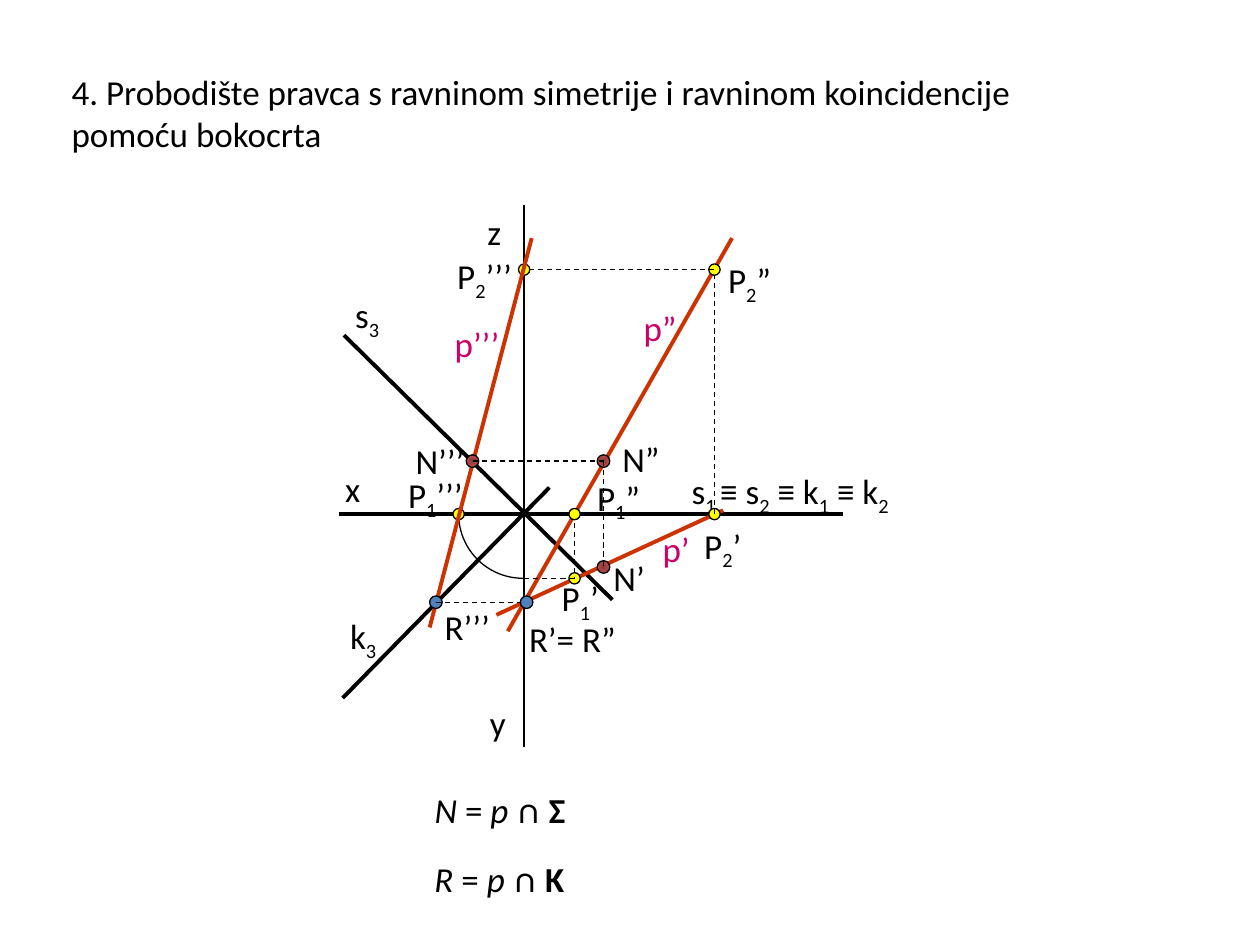
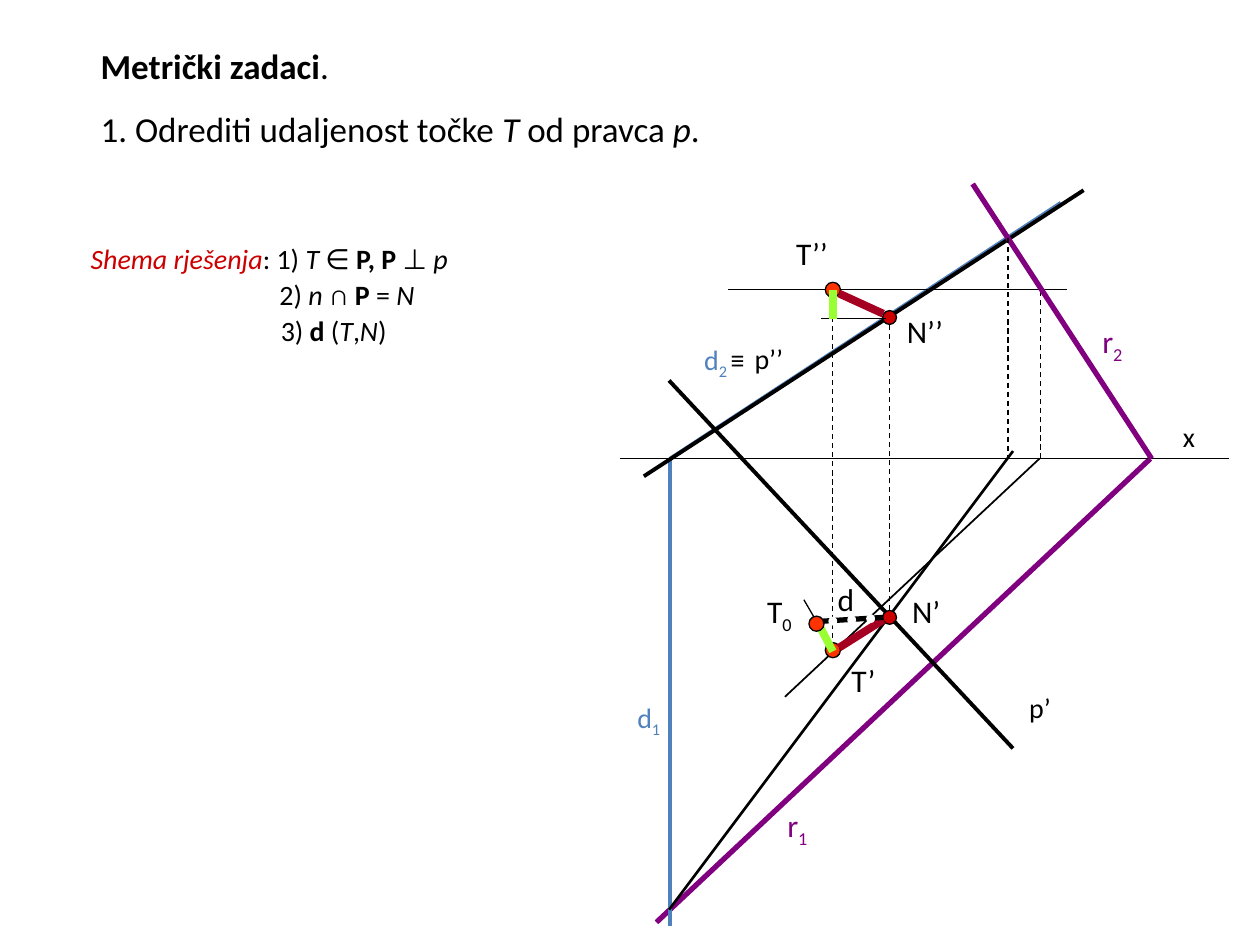
from dataclasses import dataclass
from math import cos, pi, sin
from typing import Any, NamedTuple, Union

from lxml.etree import SubElement
from pptx import Presentation
from pptx.dml.color import RGBColor
from pptx.enum.dml import MSO_LINE
from pptx.enum.shapes import MSO_CONNECTOR, MSO_SHAPE
from pptx.enum.text import MSO_ANCHOR
from pptx.oxml.ns import qn
from pptx.util import Inches, Pt

SLIDE_WIDTH, SLIDE_HEIGHT = Inches(10), Inches(7.5)
COLUMN, ROW = SLIDE_WIDTH / 10, SLIDE_HEIGHT / 7.5

FONT = "Calibri"
BLACK, WHITE, YELLOW, BLUE = "000000", "FFFFFF", "FFFF00", "4F81BD"
ORANGE, MAGENTA, PURPLE = "CC3300", "CC0066", "800080"
RED, BRIGHT_RED, DARK_RED, GREEN = "CC0000", "FF3300", "A50021", "99FF33"
BROWN_GRADIENT = ("893937", "C0504D")

THIN, AXIS, MEDIUM, THICK, HEAVY, BAR = 0.75, 1, 1.5, 2.25, 3, 4.5


class Point(NamedTuple):
    column: float
    row: float


@dataclass(frozen=True)
class Line:
    start: Point
    end: Point
    color: str = BLACK
    weight: float = THIN
    dashed: bool = False


@dataclass(frozen=True)
class Dot:
    center: Point
    fill: Union[str, tuple]
    size: float = 0.1
    outline: str = BLACK


@dataclass(frozen=True)
class QuarterArc:
    """Lower left quarter of a circle."""
    center: Point
    radius: float


@dataclass(frozen=True)
class Label:
    """Runs are parted by |. A run may start with _ (subscript), / (italic),
    * (bold) or ! (accent colour)."""
    at: Point
    width: float
    text: str
    size: int = 20
    color: str = BLACK
    accent: str = BLACK
    height: float = 0


def rgb(color: str) -> RGBColor:
    return RGBColor.from_string(color)


def apply_format(target: Any, values: dict) -> None:
    for name, value in values.items():
        setattr(target, name, value)


def across(columns: float) -> int:
    return round(columns * COLUMN)


def down(rows: float) -> int:
    return round(rows * ROW)


def dashed(start: Point, end: Point) -> Line:
    return Line(start, end, dashed=True)


def draw_line(slide: Any, line: Line) -> None:
    connector = slide.shapes.add_connector(
        MSO_CONNECTOR.STRAIGHT, across(line.start.column), down(line.start.row),
        across(line.end.column), down(line.end.row))
    connector.line.color.rgb = rgb(line.color)
    connector.line.width = Pt(line.weight)
    if line.dashed:
        connector.line.dash_style = MSO_LINE.DASH
    SubElement(connector._element.spPr, qn("a:effectLst"))


def fill_from_center(shape: Any, colors: tuple) -> None:
    shape.fill.gradient()
    for stop, color in zip(shape.fill.gradient_stops, colors):
        stop.color.rgb = rgb(color)
    gradient = shape._element.spPr.find(qn("a:gradFill"))
    gradient.remove(gradient.find(qn("a:lin")))
    focus = SubElement(gradient, qn("a:path"), {"path": "shape"})
    SubElement(focus, qn("a:fillToRect"), {side: "50000" for side in "ltrb"})


def draw_dot(slide: Any, dot: Dot) -> None:
    shape = slide.shapes.add_shape(
        MSO_SHAPE.OVAL, across(dot.center.column - dot.size / 2),
        down(dot.center.row - dot.size / 2), across(dot.size), down(dot.size))
    shape.shadow.inherit = False
    if isinstance(dot.fill, tuple):
        fill_from_center(shape, dot.fill)
    else:
        shape.fill.solid()
        shape.fill.fore_color.rgb = rgb(dot.fill)
    shape.line.color.rgb = rgb(dot.outline)
    shape.line.width = Pt(THIN)


def draw_arc(slide: Any, arc: QuarterArc, steps: int = 24) -> None:
    angles = [pi / 2 * (1 + step / steps) for step in range(steps + 1)]
    points = [(across(arc.center.column + arc.radius * cos(angle)),
               down(arc.center.row + arc.radius * sin(angle))) for angle in angles]
    builder = slide.shapes.build_freeform(*points[0])
    builder.add_line_segments(points[1:], close=False)
    shape = builder.convert_to_shape()
    shape.shadow.inherit = False
    shape.fill.background()
    shape.line.color.rgb = rgb(BLACK)
    shape.line.width = Pt(THIN)


def add_run(paragraph: Any, marked_text: str, label: Label) -> None:
    text = marked_text.lstrip("_/*!")
    marks = marked_text[:len(marked_text) - len(text)]
    run = paragraph.add_run()
    run.text = text
    apply_format(run.font, {"name": FONT, "size": Pt(label.size),
                            "bold": "*" in marks, "italic": "/" in marks})
    run.font.color.rgb = rgb(label.accent if "!" in marks else label.color)
    if "_" in marks:
        run._r.get_or_add_rPr().set("baseline", "-25000")


def draw_label(slide: Any, label: Label) -> None:
    height = label.height or 0.1 + label.size * 1.22 / 72
    box = slide.shapes.add_textbox(across(label.at.column), down(label.at.row),
                                   across(label.width), down(height))
    frame = box.text_frame
    anchor = MSO_ANCHOR.MIDDLE if label.height else MSO_ANCHOR.TOP
    apply_format(frame, {"word_wrap": True, "vertical_anchor": anchor})
    for index, text in enumerate(label.text.split("\n")):
        paragraph = frame.add_paragraph() if index else frame.paragraphs[0]
        paragraph.space_before = Pt(label.size * 0.6 if index else 0)
        for marked_text in text.split("|"):
            add_run(paragraph, marked_text, label)


DRAWERS = {Line: draw_line, Dot: draw_dot, QuarterArc: draw_arc, Label: draw_label}


def piercing_points() -> list:
    axis_x, axis_z = 4.08, 4.16
    p1_first, p1_second = Point(4.56, 4.59), Point(4.56, axis_x)
    p1_third = Point(3.64, axis_x)
    p2_first, p2_second = Point(5.67, axis_x), Point(5.67, 2.14)
    p2_third = Point(axis_z, 2.14)
    n_first, n_second, n_third = Point(4.79, 4.5), Point(4.79, 3.66), Point(3.75, 3.66)
    r_first, r_third = Point(4.18, 4.78), Point(3.46, 4.78)
    return [
        Label(Point(5.39, 3.68), 2.35, "s|_1 |≡ s|_2| ≡ k|_1| ≡ k|_2"),
        Label(Point(0.47, 0.39), 8.13,
              "4. Probodište pravca s ravninom simetrije i ravninom koincidencije "
              "pomoću bokocrta", height=1.01),
        Line(Point(2.69, axis_x), Point(6.69, axis_x), weight=THICK),
        Label(Point(2.64, 3.66), 0.48, "x"),
        Line(Point(axis_z, 1.63), Point(axis_z, 5.93), weight=AXIS),
        Label(Point(3.77, 1.62), 0.58, "z"),
        Label(Point(3.79, 5.52), 0.43, "y"),
        Line(Point(2.73, 2.66), Point(4.86, 4.76), weight=THICK),
        Label(Point(2.72, 2.28), 0.69, "s|_3"),
        Line(Point(2.72, 5.54), Point(4.36, 3.87), weight=THICK),
        Label(Point(2.68, 4.83), 0.5, "k|_3"),
        Line(Point(4.03, 5.01), Point(5.81, 1.89), ORANGE, THICK),
        Line(Point(3.94, 4.88), Point(5.74, 4.05), ORANGE, THICK),
        Label(Point(5.01, 2.38), 0.6, "p”", color=MAGENTA),
        Label(Point(5.16, 4.14), 0.51, "p’", color=MAGENTA),
        Dot(p1_first, YELLOW, 0.09),
        Label(Point(4.36, 4.53), 0.53, "P|_1|’"),
        dashed(p1_second, p1_first),
        Dot(p1_second, YELLOW, 0.09),
        Label(Point(4.64, 3.73), 0.56, "P|_1|”"),
        Dot(p2_first, YELLOW, 0.09),
        Label(Point(5.49, 4.11), 0.68, "P|_2|’"),
        dashed(p1_first, Point(axis_z, p1_first.row)),
        QuarterArc(Point(4.15, axis_x), 0.51),
        Dot(p1_third, YELLOW, 0.09),
        Label(Point(3.14, 3.71), 0.77, "P|_1|’’’"),
        dashed(p2_first, p2_second),
        Dot(p2_second, YELLOW, 0.09),
        Label(Point(5.68, 2), 0.56, "P|_2|”"),
        dashed(p2_second, p2_third),
        Dot(p2_third, YELLOW, 0.09),
        Label(Point(3.53, 1.97), 0.69, "P|_2|’’’"),
        Line(Point(4.22, 1.89), Point(3.41, 4.98), ORANGE, THICK),
        Label(Point(3.51, 2.51), 0.71, "p’’’", color=MAGENTA),
        Dot(n_third, BROWN_GRADIENT),
        Label(Point(3.2, 3.44), 0.66, "N’’’"),
        Dot(n_second, BROWN_GRADIENT),
        dashed(n_third, n_second),
        Label(Point(4.84, 3.42), 0.65, "N”"),
        Dot(n_first, BROWN_GRADIENT),
        dashed(n_second, n_first),
        Label(Point(4.77, 4.37), 0.58, "N’"),
        Label(Point(3.35, 6.21), 1.49, "/N| = |/p| |*∩ Σ"),
        Dot(r_third, BLUE),
        Label(Point(3.43, 4.76), 0.78, "R’’’"),
        Label(Point(3.35, 6.76), 1.47, "/R| = |/p |*∩ K"),
        dashed(r_third, r_first),
        Dot(r_first, BLUE),
        Label(Point(4.1, 4.85), 0.95, "R’= R”"),
    ]


def point_to_line_distance() -> list:
    axis_x = 3.64
    t_first, t_second, t_turned = Point(6.61, 5.16), Point(6.61, 2.3), Point(6.48, 4.95)
    n_first, n_second = Point(7.06, 4.9), Point(7.06, 2.52)
    trace_d = Point(5.32, axis_x)
    dash_gaps = [Dot(Point(6.61 + 0.15 * gap, 4.93 - 0.01 * gap), WHITE, 0.06, WHITE)
                 for gap in range(3)]
    return [
        Line(Point(9.13, axis_x), Point(5.21, 7.32), PURPLE, HEAVY),
        Label(Point(6.15, 6.35), 0.5, "r|_1", 18, PURPLE),
        Line(Point(8.42, 1.61), trace_d, BLUE, THICK),
        Line(trace_d, Point(trace_d.column, 7.35), BLUE, THICK),
        Label(Point(4.96, 5.51), 0.43, "d|_1", 16, BLUE),
        Label(Point(5.49, 2.67), 0.62, "!d|!_2 |≡", 16, accent=BLUE),
        Line(Point(8.25, axis_x), Point(6.23, 5.53), weight=AXIS),
        Line(Point(5.78, t_second.row), Point(8.47, t_second.row)),
        Label(Point(0.7, 0.3), 6.8,
              "*Metrički zadaci|.\n1. Odrediti udaljenost točke |/T| od pravca |/p|."),
        dashed(t_second, t_first),
        Line(Point(4.92, axis_x), Point(9.75, axis_x)),
        Label(Point(9.29, 3.28), 0.36, "x", 16),
        Line(Point(8.6, 1.51), Point(5.11, 3.78), weight=THICK),
        Line(Point(5.31, 3.02), Point(8.04, 5.94), weight=THICK),
        Dot(t_second, BRIGHT_RED, 0.12),
        Dot(t_first, BRIGHT_RED, 0.12),
        Label(Point(6.66, 5.2), 0.44, "T’", 18),
        Label(Point(6.22, 1.81), 0.56, "T’’", 18),
        Label(Point(5.89, 2.66), 0.49, "p’’", 16),
        Label(Point(8.07, 5.43), 0.44, "p’", 16),
        Label(Point(0.62, 1.87), 3.69,
              "!/Shema rješenja|: 1) |/T |∈ |*P, P |⊥ |/p", 16, accent=RED),
        dashed(Point(8.26, axis_x), Point(8.26, 2.31)),
        Line(Point(9.14, axis_x), Point(7.72, 1.46), PURPLE, HEAVY),
        Label(Point(8.65, 2.51), 0.4, "r|_2", 18, PURPLE),
        Label(Point(2.12, 2.15), 2.14, "2) |/n |∩ |*P| = |/N", 16),
        dashed(Point(8, 1.89), Point(8, axis_x)),
        Line(Point(8.04, 3.58), Point(5.31, 7.22), weight=MEDIUM),
        Dot(n_first, RED, 0.11),
        Label(Point(7.14, 4.65), 0.47, "N’", 18),
        Dot(n_second, RED, 0.11),
        dashed(Point(n_first.column, 4.84), Point(n_second.column, 2.56)),
        Label(Point(7.1, 2.43), 0.57, "N’’", 18),
        Line(Point(6.66, 2.33), Point(7.01, 2.49), DARK_RED, BAR),
        Line(Point(6.66, 5.14), Point(7.01, 4.92), DARK_RED, BAR),
        Label(Point(2.13, 2.44), 1.85, "3) |*d| (|/T|,|/N|)", 16),
        Line(Point(6.52, 2.53), Point(7.03, 2.53)),
        Line(Point(6.59, 5.12), Point(6.38, 4.76)),
        Line(t_second, Point(t_second.column, 2.53), GREEN, BAR),
        Line(Point(6.5, 4.96), Point(6.61, 5.17), GREEN, BAR),
        Dot(t_turned, BRIGHT_RED, 0.12),
        Label(Point(5.99, 4.65), 0.47, "T|_0", 18),
        Line(Point(6.53, 4.93), Point(7.01, 4.9), weight=HEAVY),
        *dash_gaps,
        Label(Point(6.55, 4.55), 0.3, "d", 18),
    ]


def main() -> None:
    presentation = Presentation()
    apply_format(presentation, {"slide_width": SLIDE_WIDTH, "slide_height": SLIDE_HEIGHT})
    for elements in (piercing_points(), point_to_line_distance()):
        slide = presentation.slides.add_slide(presentation.slide_layouts[6])
        for element in elements:
            DRAWERS[type(element)](slide, element)
    presentation.save("out.pptx")


if __name__ == "__main__":
    main()
